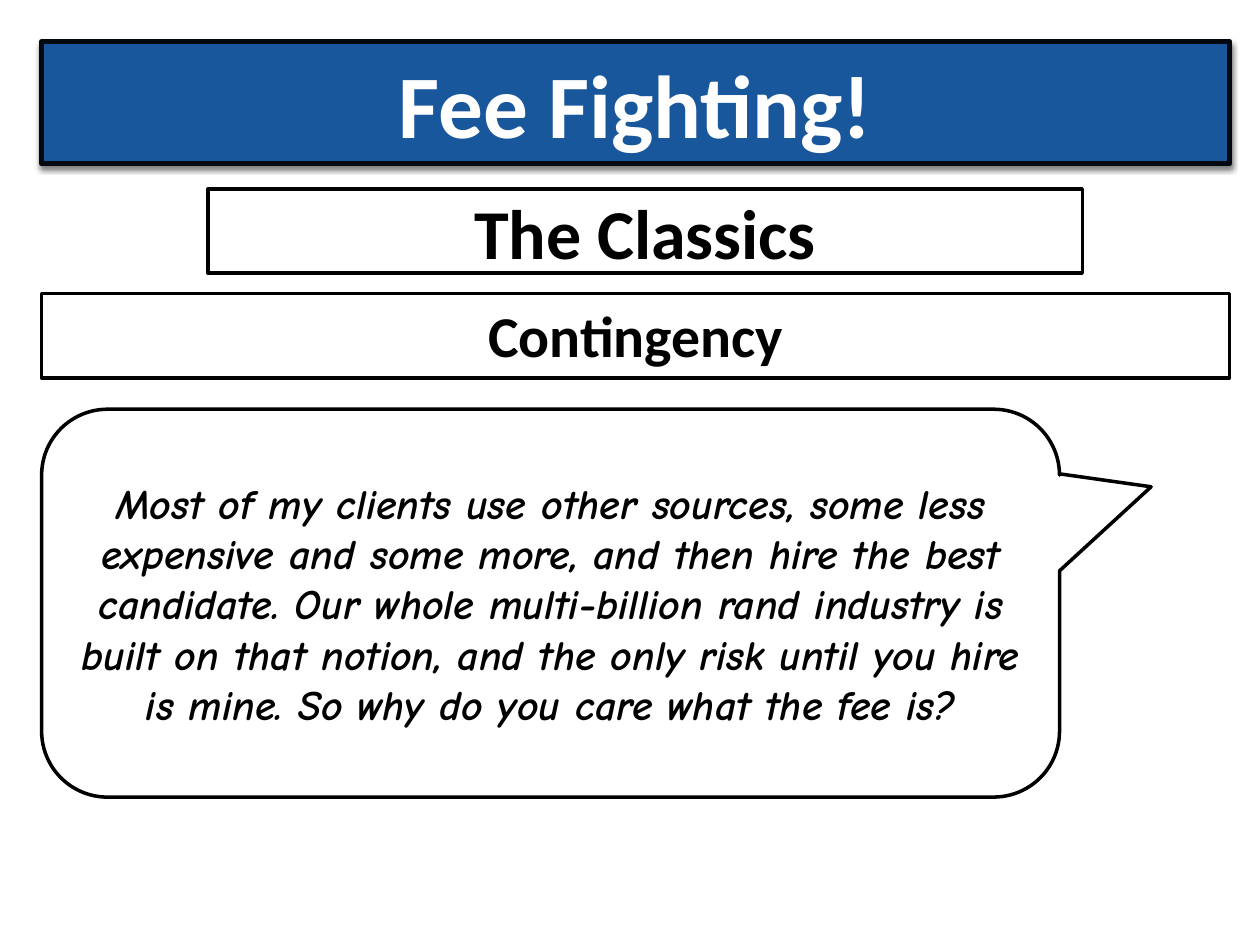
from lxml import etree
from pptx import Presentation
from pptx.dml.color import RGBColor
from pptx.enum.shapes import MSO_SHAPE as SHAPE
from pptx.enum.text import MSO_ANCHOR as ANCHOR, PP_ALIGN as ALIGN
from pptx.oxml.ns import qn
from pptx.util import Cm, Pt

BLUE = RGBColor(0x18, 0x57, 0x9B)
NAVY = RGBColor(0x02, 0x08, 0x0F)
WHITE = RGBColor(0xFF, 0xFF, 0xFF)
BLACK = RGBColor(0, 0, 0)

# Content
TITLE = "Fee Fighting!"
SECTION = "The Classics"
TOPIC = "Contingency"
QUOTE = (
    "Most of my clients use other sources, some less expensive and some more, "
    "and then hire the best candidate. Our whole multi-billion rand industry is "
    "built on that notion, and the only risk until you hire is mine. "
    "So why do you care what the fee is?"
)

# Layout in cm
LEFT, FULL_WIDTH, BAR_HEIGHT = 0.84, 23.95, 1.7


def add_box(slide, text, left, top, width, height, *, kind=SHAPE.RECTANGLE,
            fill=WHITE, line=BLACK, line_width=2, size=24, color=BLACK,
            font="Calibri", italic=False, anchor=ANCHOR.MIDDLE):
    s = slide.shapes.add_shape(kind, Cm(left), Cm(top), Cm(width), Cm(height))
    s.shadow.inherit = False
    s.fill.solid()
    s.fill.fore_color.rgb = fill
    s.line.color.rgb = line
    s.line.width = Pt(line_width)
    tf = s.text_frame
    tf.word_wrap = True
    tf.vertical_anchor = anchor
    p = tf.paragraphs[0]
    p.alignment = ALIGN.CENTER
    r = p.add_run()
    r.text = text
    r.font.name = font
    r.font.size = Pt(size)
    r.font.bold = True
    r.font.italic = italic
    r.font.color.rgb = color
    return s


def add_shadow(s, blur, distance, angle, opacity):
    effects = s.element.spPr.find(qn("a:effectLst"))
    shadow = etree.SubElement(
        effects, qn("a:outerShdw"), blurRad=str(Pt(blur)), dist=str(Pt(distance)),
        dir=str(angle * 60000), rotWithShape="0")
    color = etree.SubElement(shadow, qn("a:srgbClr"), val=str(BLACK))
    etree.SubElement(color, qn("a:alpha"), val=str(opacity * 1000))


prs = Presentation()
prs.slide_width, prs.slide_height = Cm(25.4), Cm(19.05)
slide = prs.slides.add_slide(prs.slide_layouts[6])

# Title banner
banner = add_box(slide, TITLE, LEFT, 0.84, FULL_WIDTH, 2.46, fill=BLUE,
                 line=NAVY, line_width=3, size=51, color=WHITE)
add_shadow(banner, blur=3, distance=2, angle=90, opacity=50)

# Heading bars
add_box(slide, SECTION, 4.19, 3.81, 17.63, BAR_HEIGHT, size=40)
add_box(slide, TOPIC, LEFT, 5.92, FULL_WIDTH, BAR_HEIGHT, size=33,
        anchor=ANCHOR.TOP)

# Speech bubble with its tail to the right
bubble = add_box(slide, QUOTE, LEFT, 8.25, 20.52, 7.82,
                 kind=SHAPE.ROUNDED_RECTANGULAR_CALLOUT,
                 font="Comic Neue", italic=True)
for i, value in enumerate((0.59, -0.3, 0.17)):
    bubble.adjustments[i] = value

prs.save("out.pptx")
